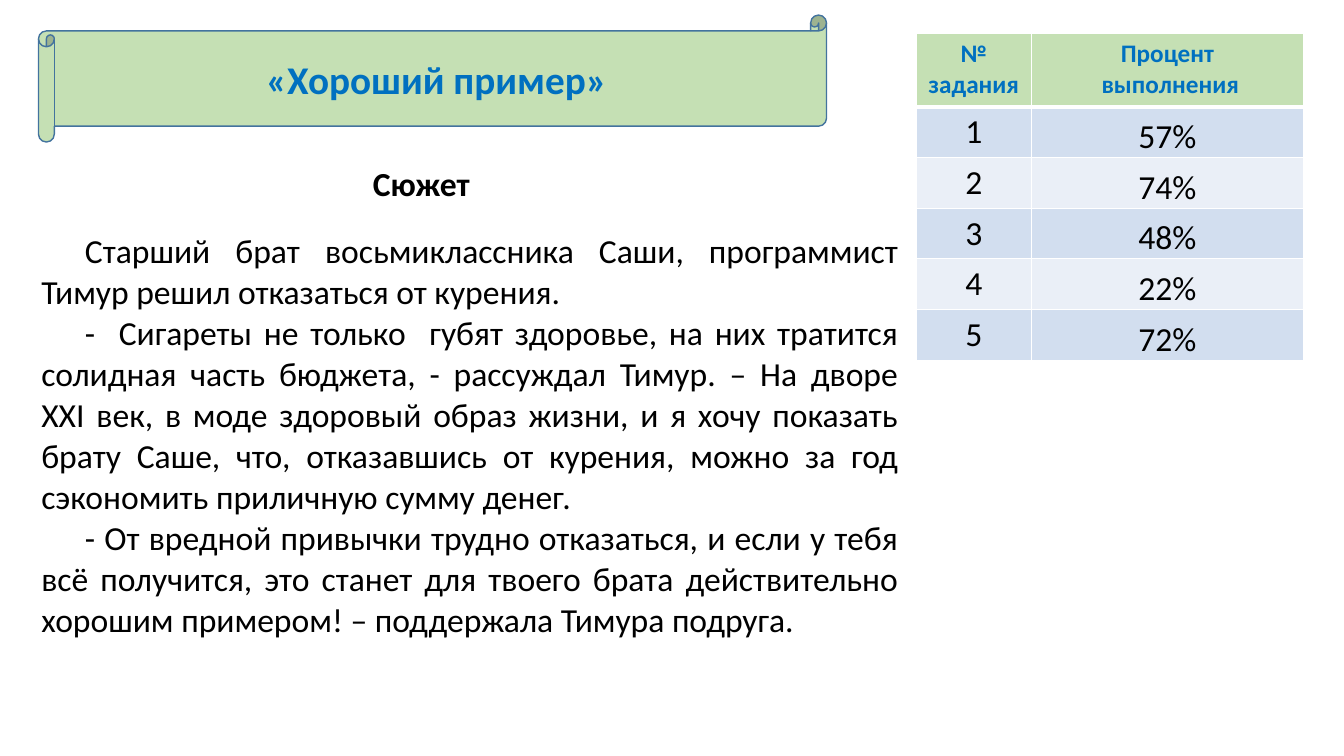
"""Build the slide with a story and a table of task results."""
from dataclasses import dataclass

from lxml import etree
from pptx import Presentation
from pptx import util as u
from pptx.dml import color
from pptx.enum import shapes, text
from pptx.oxml import ns

GREEN, BLUE, BLACK, WHITE = "C5E0B4", "0070C0", "000000", "FFFFFF"
BANDS = ("D2DEEF", "EAEFF7")
MID, JUST = text.PP_ALIGN.CENTER, text.PP_ALIGN.JUSTIFY
TOP, LOW = text.MSO_ANCHOR.TOP, text.MSO_ANCHOR.BOTTOM


@dataclass(frozen=True)
class Box:
    left: float
    top: float
    width: float
    height: float

    def cm(self) -> tuple:
        return tuple(u.Cm(n) for n in (self.left, self.top, self.width, self.height))


@dataclass(frozen=True)
class Style:
    size: int
    tint: str = BLACK
    bold: bool = False
    align: text.PP_ALIGN = MID
    indent: float = 0


@dataclass(frozen=True)
class Cell:
    lines: tuple
    style: Style
    fill: str = ""
    anchor: text.MSO_ANCHOR = TOP
    pads: tuple = (0.25, 0.13, 0.25, 0.13)
    side: float = 1
    base: float = 1


HEAD = Style(18, BLUE, True)
BODY = Style(24)
STORY = Style(24, align=JUST, indent=1.1)
TALE = (
    "Старший брат восьмиклассника Саши, программист Тимур решил отказаться от курения.",
    "-  Сигареты не только  губят здоровье, на них тратится солидная часть бюджета, "
    "- рассуждал Тимур. – На дворе XXI век, в моде здоровый образ жизни, и я хочу "
    "показать брату Саше, что, отказавшись от курения, можно за год сэкономить "
    "приличную сумму денег.",
    "- От вредной привычки трудно отказаться, и если у тебя всё получится, это станет "
    "для твоего брата действительно хорошим примером! – поддержала Тимура подруга.",
)
RATES = (57, 74, 48, 22, 72)


def rgb(code: str) -> color.RGBColor:
    return color.RGBColor.from_string(code)


def apply(item, values: dict) -> None:
    for name, value in values.items():
        setattr(item, name, value)


def write(frame, lines: tuple, style: Style) -> None:
    for spot, line in enumerate(lines):
        para = frame.add_paragraph() if spot else frame.paragraphs[0]
        para.alignment = style.align
        if style.indent:
            para._p.get_or_add_pPr().set("indent", str(u.Cm(style.indent)))
        run = para.add_run()
        run.text = line
        apply(run.font, {"size": u.Pt(style.size), "name": "Calibri", "bold": style.bold})
        run.font.color.rgb = rgb(style.tint)


def edge(cell, data: Cell) -> None:
    props = cell._tc.get_or_add_tcPr()
    sides = {"L": data.side, "R": data.side, "T": data.side, "B": data.base}
    for side, wide in sides.items():
        line = etree.SubElement(props, ns.qn(f"a:ln{side}"), w=str(u.Pt(wide)))
        if wide:
            fill = etree.SubElement(line, ns.qn("a:solidFill"))
            etree.SubElement(fill, ns.qn("a:srgbClr"), val=WHITE)
        else:
            etree.SubElement(line, ns.qn("a:noFill"))


def grid(slide, box: Box, cols: tuple, rows: tuple, cells: list) -> None:
    table = slide.shapes.add_table(len(rows), len(cols), *box.cm()).table
    apply(table, {"first_row": False, "horz_banding": False})
    for col, wide in zip(table.columns, cols):
        col.width = u.Cm(wide)
    for row, high, line in zip(table.rows, rows, cells):
        row.height = u.Cm(high)
        for cell, data in zip(row.cells, line):
            names = ("margin_left", "margin_top", "margin_right", "margin_bottom")
            apply(cell, dict(zip(names, map(u.Cm, data.pads))))
            cell.vertical_anchor = data.anchor
            edge(cell, data)
            if data.fill:
                cell.fill.solid()
                cell.fill.fore_color.rgb = rgb(data.fill)
            else:
                cell.fill.background()
            write(cell.text_frame, data.lines, data.style)


def banner(slide, box: Box, title: str) -> None:
    shape = slide.shapes.add_shape(shapes.MSO_SHAPE.HORIZONTAL_SCROLL, *box.cm())
    shape.shadow.inherit = False
    shape.fill.solid()
    shape.fill.fore_color.rgb = rgb(GREEN)
    shape.line.color.rgb = rgb("43739E")
    shape.line.width = u.Pt(1)
    apply(shape.text_frame, {"word_wrap": True, "vertical_anchor": text.MSO_ANCHOR.MIDDLE})
    write(shape.text_frame, (title,), Style(28, BLUE, True))


def label(slide, box: Box, title: str) -> None:
    frame = slide.shapes.add_textbox(*box.cm()).text_frame
    apply(frame, {"word_wrap": False, "auto_size": text.MSO_AUTO_SIZE.SHAPE_TO_FIT_TEXT})
    write(frame, (title,), Style(24, bold=True, align=text.PP_ALIGN.LEFT))


def main() -> None:
    deck = Presentation()
    apply(deck, {"slide_width": u.Cm(33.87), "slide_height": u.Cm(19.05)})
    slide = deck.slides.add_slide(deck.slide_layouts[6])
    banner(slide, Box(0.97, 0.38, 19.86, 3.2), "«Хороший пример»")
    label(slide, Box(9.15, 3.99, 2.97, 1.27), "Сюжет")
    tale = Cell(TALE, STORY, pads=(0.3, 0, 0.3, 0), side=0, base=0)
    grid(slide, Box(0.74, 5.84, 22.2, 10.5), (22.2,), (10.5,), [[tale]])
    heads = (("№ задания",), ("Процент", " выполнения"))
    cells = [[Cell(lines, HEAD, GREEN, base=3) for lines in heads]]
    for spot, rate in enumerate(RATES):
        band = BANDS[spot % 2]
        cells.append([
            Cell((str(spot + 1),), BODY, band),
            Cell((f"{rate}%",), BODY, band, LOW, (0.03, 0.03, 0.03, 0)),
        ])
    rows = (1.85,) + (1.27,) * len(RATES)
    grid(slide, Box(23.09, 0.84, 9.76, sum(rows)), (2.9, 6.86), rows, cells)
    deck.save("out.pptx")


if __name__ == "__main__":
    main()
